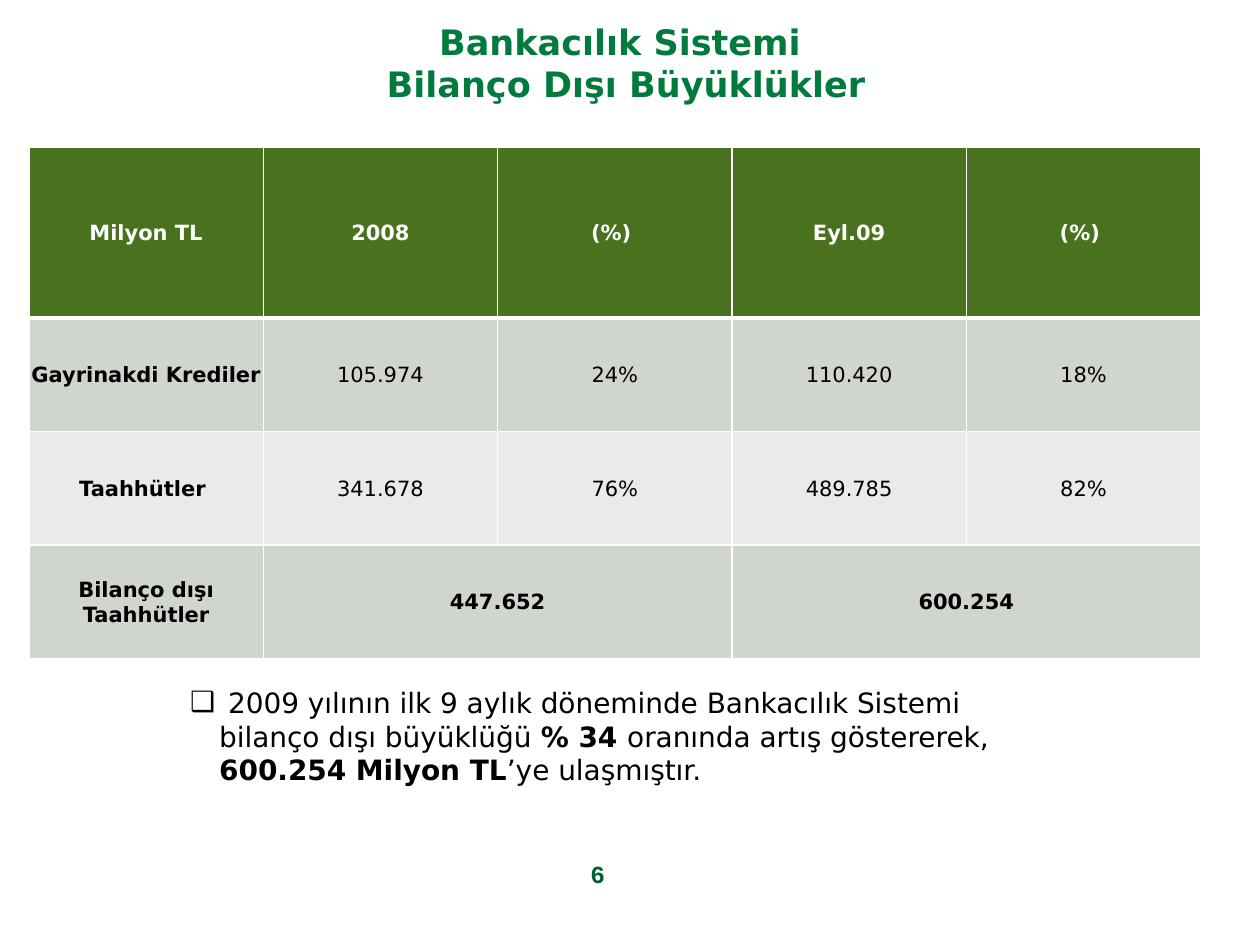
"""Build the slide on off-balance-sheet figures of the banking system."""
from lxml import etree
from pptx import Presentation
from pptx import util as u
from pptx.dml.color import RGBColor
from pptx.enum import text
from pptx.oxml import ns

COLORS = {"title": "007A3D", "number": "005E31", "header": "49711E",
          "odd": "D0D5CD", "even": "E9EBE8", "white": "FFFFFF", "black": "000000"}
FONT = "DejaVu Sans"

prs = Presentation()
prs.slide_width, prs.slide_height = u.Inches(10), u.Inches(7.5)
W, H = prs.slide_width, prs.slide_height
s = prs.slides.add_slide(prs.slide_layouts[1])


def add_run(p, words, size, color, bold=False, font=FONT):
    r = p.add_run()
    r.text = words
    r.font.size, r.font.bold, r.font.name = u.Pt(size), bold, font
    r.font.color.rgb = RGBColor.from_string(COLORS[color])


def add_border(cell, side, width):
    ln = etree.SubElement(cell._tc.get_or_add_tcPr(), ns.qn(f"a:{side}"), w=str(u.Pt(width)))
    fill = etree.SubElement(ln, ns.qn("a:solidFill"))
    etree.SubElement(fill, ns.qn("a:srgbClr"), val=COLORS["white"])


sp = s.shapes.title
sp.left, sp.top, sp.width, sp.height = u.Inches(0.47), u.Inches(0.16), int(W * 0.9), int(H * 0.09)
tf = sp.text_frame
tf.auto_size = text.MSO_AUTO_SIZE.NONE
tf.vertical_anchor = text.MSO_ANCHOR.MIDDLE
for i, line in enumerate(["Bankacılık Sistemi ", "Bilanço Dışı Büyüklükler"]):
    p = tf.add_paragraph() if i else tf.paragraphs[0]
    p.alignment = text.PP_ALIGN.CENTER
    add_run(p, line, 20, "title", True)

rows = [
    ["Milyon TL", "2008", "(%) ", "Eyl.09", "(%) "],
    ["Gayrinakdi Krediler", "105.974", "24%", "110.420", "18%"],
    ["Taahhütler ", "341.678", "76%", "489.785", "82%"],
    ["Bilanço dışı Taahhütler", "447.652", "", "600.254", ""],
]
fills = ["header", "odd", "even", "odd"]
last = len(rows) - 1
row_h = u.Inches(4.06 / 4.5)
table = s.shapes.add_table(len(rows), 5, u.Inches(0.23), u.Inches(1.17),
                           int(W * 0.93), int(row_h * 4.5)).table
for i, row in enumerate(rows):
    table.rows[i].height = row_h if i else int(row_h * 1.5)
    for j, words in enumerate(row):
        cell = table.cell(i, j)
        cell.margin_left = cell.margin_top = cell.margin_right = u.Inches(0.01)
        cell.margin_bottom = 0
        cell.vertical_anchor = text.MSO_ANCHOR.MIDDLE
        for side in ("lnL", "lnR", "lnT", "lnB"):
            thick = (i, side) in ((0, "lnB"), (1, "lnT"))
            add_border(cell, side, 3 if thick else 1)
        cell.fill.solid()
        cell.fill.fore_color.rgb = RGBColor.from_string(COLORS[fills[i]])
        p = cell.text_frame.paragraphs[0]
        p.alignment = text.PP_ALIGN.CENTER
        if words:
            add_run(p, words, 12, "black" if i else "white", i in (0, last) or j == 0)
for j in (1, 3):
    table.cell(last, j).merge(table.cell(last, j + 1))

sp = s.placeholders[1]
sp.left, sp.top, sp.width, sp.height = u.Inches(1.41), u.Inches(5.39), u.Inches(7.11), u.Inches(0.91)
tf = sp.text_frame
tf.auto_size = text.MSO_AUTO_SIZE.SHAPE_TO_FIT_TEXT
p = tf.paragraphs[0]
p.space_before = u.Pt(0)
pPr = p._p.get_or_add_pPr()
pPr.set("marL", str(u.Inches(0.23)))
pPr.set("indent", str(-u.Inches(0.23)))
etree.SubElement(pPr, ns.qn("a:buFont"), typeface=FONT)
etree.SubElement(pPr, ns.qn("a:buChar"), char="❑")
for words, bold in [
    (" 2009 yılının ilk 9 aylık döneminde Bankacılık Sistemi bilanço dışı büyüklüğü ", False),
    ("% 34 ", True),
    ("oranında artış göstererek, ", False),
    ("600.254 Milyon TL", True),
    ("’ye ulaşmıştır.", False),
]:
    add_run(p, words, 16, "black", bold)

tf = s.shapes.add_textbox(u.Inches(3.58), u.Inches(6.82), u.Inches(2.33), u.Inches(0.52)).text_frame
tf.word_wrap = True
p = tf.paragraphs[0]
p.alignment = text.PP_ALIGN.CENTER
p.line_spacing = 0.76
add_run(p, "6", 14, "number", True, "Courier New")

prs.save("out.pptx")
